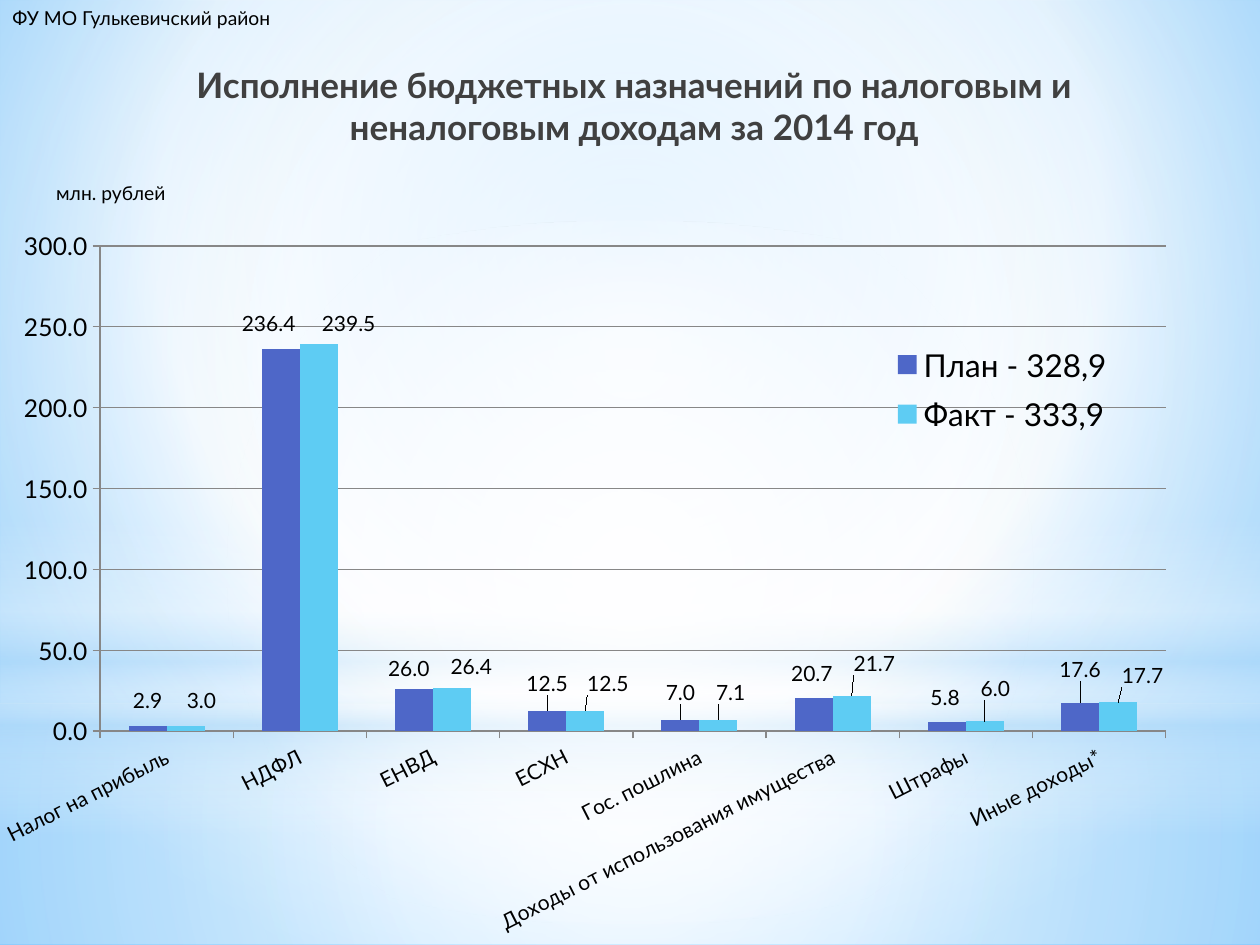
"""Builds a slide that compares planned and actual budget revenue by source."""
from lxml.etree import SubElement
from pptx import Presentation
from pptx.chart.data import CategoryChartData
from pptx.dml.color import RGBColor
from pptx.enum.chart import XL_CHART_TYPE, XL_LABEL_POSITION, XL_LEGEND_POSITION, XL_TICK_MARK
from pptx.enum.shapes import MSO_SHAPE
from pptx.enum.text import MSO_ANCHOR, PP_ALIGN
from pptx.oxml.ns import qn
from pptx.util import Pt

CATEGORIES = ["Налог на прибыль", "НДФЛ", "ЕНВД", "ЕСХН", "Гос. пошлина",
              "Доходы от использования имущества", "Штрафы", "Иные доходы*"]
SERIES = [
    ("План - 328,9", "4E67C8", [2.9, 236.4, 26, 12.5, 7, 20.7, 5.8, 17.6],
     [(0, -5), (-7, -5), (-3, -2), (0, -6), (0, -6), (-1, -4), (-1, -4), (0, -9)]),
    ("Факт - 333,9", "5ECCF3", [3, 239.5, 26.4, 12.5, 7.1, 21.7, 6, 17.7],
     [(9, -5), (17, -2), (11, -3), (13, -6), (7, -6), (13, -9), (6, -9), (14, -6)]),
]
CENTRE = (50, 50, 50, 50)
GLOWS = [
    (MSO_SHAPE.RECTANGLE, (0, 402, 720, 138), CENTRE,
     [(0, "FFFFFF", 91), (37, "FFFFFF", 76), (100, "B4DCFA", 79)]),
    (MSO_SHAPE.RECTANGLE, (0, 0, 720, 402), CENTRE,
     [(0, "FFFFFF", 89), (48, "FFFFFF", 62), (100, "B4DCFA", 79)]),
    (MSO_SHAPE.RECTANGLE, (0, 297, 720, 180), None,
     [(0, "FFFFFF", 0), (29, "FFFFFF", 30), (45, "B4DCFA", 40),
      (55, "FFFFFF", 26), (65, "B4DCFA", 60), (100, "FFFFFF", 0)]),
    (MSO_SHAPE.OVAL, (0, 126, 720, 402), CENTRE,
     [(0, "FFFFFF", 100), (56, "FFFFFF", 0)]),
]


def color(value):
    """Turns a hex string into a colour."""
    return RGBColor.from_string(value)


def add_node(parent, tag, **attributes):
    """Adds an XML child with the given attributes."""
    return SubElement(parent, qn(tag), {key: str(value) for key, value in attributes.items()})


def make_gradient(parent, stops, focus):
    """Swaps the solid fill of a parent for a radial or downward gradient."""
    solid = parent.find(qn("a:solidFill"))
    gradient = add_node(parent, "a:gradFill", rotWithShape=1)
    parent.replace(solid, gradient)
    stop_list = add_node(gradient, "a:gsLst")
    for position, value, opacity in stops:
        stop = add_node(stop_list, "a:gs", pos=position * 1000)
        add_node(add_node(stop, "a:srgbClr", val=value), "a:alpha", val=opacity * 1000)
    if focus:
        radial = add_node(gradient, "a:path", path="circle")
        add_node(radial, "a:fillToRect", **{side: share * 1000 for side, share in zip("ltrb", focus)})
    else:
        add_node(gradient, "a:lin", ang=5400000, scaled=0)


def place_part(parent, index, **settings):
    """Inserts a manual chart layout at the given child index."""
    layout = add_node(parent, "c:layout")
    manual = add_node(layout, "c:manualLayout")
    for name, value in settings.items():
        add_node(manual, f"c:{name}", val=value)
    parent.insert(index, layout)


class SlideBuilder:
    """Holds the style and the current slide."""

    font, ink, title_ink, line = "Lato", "000000", "404040", "878787"

    def __init__(self, deck):
        self.page = deck.slides.add_slide(deck.slide_layouts[5])
        self.shapes = self.page.shapes

    def style(self, font, size, ink=None, bold=False):
        """Applies the shared typeface with a size and colour."""
        font.name, font.size, font.bold = self.font, Pt(size), bold
        font.color.rgb = color(ink or self.ink)

    def background(self, stops, focus):
        """Paints the page with a radial gradient."""
        self.page.background.fill.solid()
        make_gradient(self.page.element.find(".//" + qn("p:bgPr")), stops, focus)

    def glow(self, kind, frame, focus, stops):
        """Adds a soft translucent shape."""
        shape = self.shapes.add_shape(kind, *map(Pt, frame))
        shape.shadow.inherit = False
        shape.line.fill.background()
        shape.fill.solid()
        make_gradient(shape.element.spPr, stops, focus)

    def title(self, text, frame):
        """Fills the title placeholder and lifts it above the glows."""
        box = self.shapes.title
        box.left, box.top, box.width, box.height = map(Pt, frame)
        self.page.shapes.element.append(box.element)
        box.text_frame.vertical_anchor = MSO_ANCHOR.MIDDLE
        para = box.text_frame.paragraphs[0]
        para.alignment = PP_ALIGN.CENTER
        span = para.add_run()
        span.text = text
        self.style(span.font, 20, self.title_ink, True)

    def note(self, text, frame):
        """Adds a one-line text box."""
        box = self.shapes.add_textbox(*map(Pt, frame))
        box.text_frame.word_wrap = False
        span = box.text_frame.paragraphs[0].add_run()
        span.text = text
        self.style(span.font, 11)

    def axis(self, axis, size):
        """Styles one chart axis."""
        axis.major_tick_mark = XL_TICK_MARK.OUTSIDE
        axis.format.line.color.rgb = color(self.line)
        self.style(axis.tick_labels.font, size)

    def columns(self, frame):
        """Adds the clustered column chart."""
        data = CategoryChartData(number_format="0.0")
        data.categories = CATEGORIES
        for name, _, values, _ in SERIES:
            data.add_series(name, values)
        chart = self.shapes.add_chart(XL_CHART_TYPE.COLUMN_CLUSTERED, *map(Pt, frame), data).chart
        chart.has_title = False
        self.style(chart.font, 18)
        self.axis(chart.category_axis, 12)
        chart.category_axis._element.find(".//" + qn("a:bodyPr")).set("rot", str(-27 * 60000))
        self.axis(chart.value_axis, 14)
        chart.value_axis.minimum_scale, chart.value_axis.maximum_scale = 0, 300
        chart.value_axis.major_unit = 50
        chart.value_axis.major_gridlines.format.line.color.rgb = color(self.line)
        plot = chart.plots[0]
        plot.gap_width, plot.overlap, plot.vary_by_categories = 150, 0, False
        for series, (_, fill, _, offsets) in zip(plot.series, SERIES):
            series.format.fill.solid()
            series.format.fill.fore_color.rgb = color(fill)
            self.labels(series, offsets, frame)
        area = chart._chartSpace.chart.plotArea
        for old in area.findall(qn("c:layout")):
            area.remove(old)
        place_part(area, 0, layoutTarget="inner", xMode="edge", yMode="edge",
                   x=0.1, y=0.03, w=0.88, h=0.66)
        self.legend(chart)

    def labels(self, series, offsets, frame):
        """Shows each value, shifted from its column by an offset in points."""
        labels = series.data_labels
        labels.show_value, labels.number_format = True, "0.0"
        labels.number_format_is_linked = False
        self.style(labels.font, 12)
        for index, (across, down) in enumerate(offsets):
            label = series.points[index].data_label
            label.position = XL_LABEL_POSITION.OUTSIDE_END
            self.style(label.font, 12)
            place_part(labels._element.findall(qn("c:dLbl"))[index], 1,
                       x=across / frame[2], y=down / frame[3])

    def legend(self, chart):
        """Lays the legend over the empty part of the plot."""
        chart.has_legend = True
        chart.legend.position = XL_LEGEND_POSITION.RIGHT
        chart.legend.include_in_layout = True
        self.style(chart.legend.font, 18)
        place_part(chart.legend._element, 1, xMode="edge", yMode="edge",
                   x=0.75, y=0.15, w=0.19, h=0.15)


def main():
    """Builds and saves the deck."""
    deck = Presentation()
    deck.slide_width, deck.slide_height = Pt(720), Pt(540)
    slide = SlideBuilder(deck)
    slide.background([(0, "9ED5FF", 100), (60, "FFFFFF", 100), (100, "5BB9FF", 100)], (20, 10, 20, 60))
    for glow in GLOWS:
        slide.glow(*glow)
    slide.title("Исполнение бюджетных назначений по налоговым и неналоговым доходам за 2014 год",
                (48, 32, 629, 57))
    slide.note("млн. рублей", (25, 100, 79, 22))
    slide.columns((-12, 128, 692, 420))
    slide.note("ФУ МО Гулькевичский район", (0, 0, 162, 21))
    deck.save("out.pptx")


if __name__ == "__main__":
    main()
